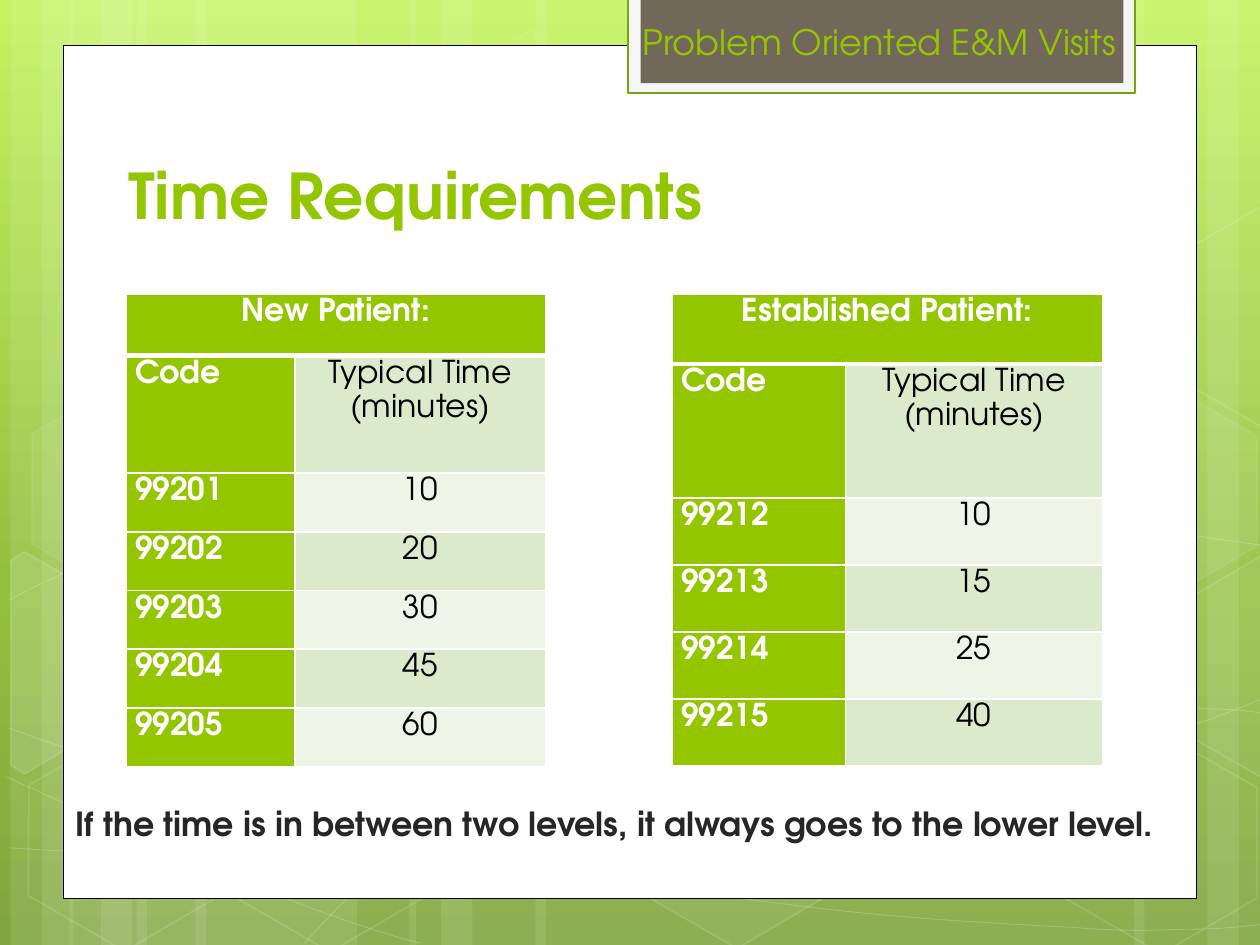
from copy import deepcopy
from dataclasses import dataclass
from math import cos, radians, sin
from typing import Optional

from lxml.etree import SubElement
from pptx import Presentation
from pptx.dml.color import RGBColor
from pptx.enum.shapes import MSO_SHAPE
from pptx.enum.text import MSO_ANCHOR, PP_ALIGN
from pptx.oxml.ns import qn
from pptx.util import Pt

Point = tuple[float, float]


@dataclass(frozen=True)
class Theme:
    font: str = "TeX Gyre Adventor"
    green: str = "94C600"
    dark_green: str = "74A510"
    pale: str = "DCEACC"
    paler: str = "EEF5E7"
    white: str = "FFFFFF"
    black: str = "000000"
    ink: str = "262626"
    tab_rim: str = "F5F5F5"
    tab: str = "71685A"
    sky: tuple = ((0, "C3F35F"), (0.62, "93BF3F"), (1, "81A53E"))
    title_size: float = 36
    tab_size: float = 20
    note_size: float = 19
    table_size: float = 18


THEME = Theme()


@dataclass(frozen=True)
class Box:
    left: float
    top: float
    width: float
    height: float

    def lengths(self) -> list:
        return [Pt(v) for v in (self.left, self.top, self.width, self.height)]


@dataclass(frozen=True)
class Paint:
    """Colours with opacity in percent; a missing colour means no fill or line."""
    fill: Optional[str] = None
    fill_opacity: int = 100
    line: Optional[str] = None
    line_opacity: int = 100
    weight: float = 1


@dataclass(frozen=True)
class TimeTable:
    box: Box
    heading: str
    columns: tuple
    unit: float  # height of a one-line row; the second row is twice as high
    times: tuple


BANDS = [(78, 126), (6, 36), (24, 60), (111.6, 126), (39.6, 36), (57.6, 60),
         (528, 126), (690, 36), (648, 60), (306, 222), (234, 36), (252, 60)]

# Each wave is a start point followed by Bézier triples.
WAVES = [
    [(5, 484.5), (44, 487), (83, 489), (137, 488), (191, 487), (258, 486), (330, 479),
     (402, 472), (504, 458), (570, 444), (636, 431), (703, 409), (725, 397)],
    [(5, 343), (26, 332), (47, 321), (87, 310), (128, 300), (186, 284), (250, 279),
     (314, 274), (392, 273), (471, 279), (550, 284), (682, 307), (725, 312)],
    [(4, 444), (91, 484), (178, 523), (240, 539)],
    [(5, 416), (27, 424), (50, 432), (92, 444), (134, 454), (197, 472), (257, 485),
     (317, 497), (392, 510), (452, 517), (512, 525), (576, 528), (614, 530),
     (652, 533), (662, 531), (680, 531), (699, 531), (712, 529), (725, 528)],
    [(174, 539), (187, 525), (200, 510), (217, 498), (235, 485), (259, 470), (279, 460),
     (300, 450), (312, 445), (338, 438), (364, 431), (413, 421), (438, 416),
     (464, 411), (467, 411), (490, 410), (512, 408), (547, 405), (572, 405),
     (597, 404), (638, 405), (638, 405), (654, 405), (670, 405), (686, 405),
     (699, 405), (711, 406), (718, 407), (722, 408), (722, 407), (724, 408)],
]

# left, top, fill opacity, line opacity
HEXAGONS = [(240.5, 26, 4, 8), (358, 424, 6, 12), (8, 425.5, 0, 12), (10, 224.5, 7, 8),
            (125.5, 426, 0, 12), (542, 326, 10, 12), (600.5, 427, 0, 12), (600.5, 226, 7, 8)]

LEFT_CUT = [(6, 320), (14, 315), (69, 347), (68, 410), (14, 442), (6, 437)]
RIGHT_CUT = [(667, 349), (721, 317.5), (726, 321), (726, 441), (721, 444), (667, 413)]
UPPER_CUT = [(x, y - 200) for x, y in RIGHT_CUT]
CUT_HEXAGONS = [(LEFT_CUT, (26, 385), 10), (RIGHT_CUT, (709, 374.5), 4),
                (UPPER_CUT, (709, 173.5), 0)]
TILT = 30

TABLES = [
    TimeTable(Box(72, 168, 239.8, 270), "New Patient:", (96.5, 143.3), 33.55,
              (("99201", "10"), ("99202", "20"), ("99203", "30"),
               ("99204", "45"), ("99205", "60"))),
    TimeTable(Box(384, 168, 246, 270), "Established Patient:", (99.2, 146.8), 38.3,
              (("99212", "10"), ("99213", "15"), ("99214", "25"), ("99215", "40"))),
]


def color(code: str) -> RGBColor:
    return RGBColor.from_string(code)


def fade(holder, opacity: int) -> None:
    """Make the colour inside an XML fill or line partly transparent."""
    if opacity < 100:
        SubElement(holder.find(".//" + qn("a:srgbClr")), qn("a:alpha"), val=str(opacity * 1000))


def apply_paint(shape, paint: Paint) -> None:
    shape.shadow.inherit = False
    properties = shape.element.spPr
    if paint.fill and paint.fill_opacity:
        shape.fill.solid()
        shape.fill.fore_color.rgb = color(paint.fill)
        fade(properties.find(qn("a:solidFill")), paint.fill_opacity)
    else:
        shape.fill.background()
    if paint.line:
        shape.line.color.rgb = color(paint.line)
        shape.line.width = Pt(paint.weight)
        fade(properties.find(qn("a:ln")), paint.line_opacity)
    else:
        shape.line.fill.background()


def add_preset(page, kind, box: Box, paint: Paint):
    shape = page.shapes.add_shape(kind, *box.lengths())
    apply_paint(shape, paint)
    return shape


def add_outline(page, points: list[Point], paint: Paint, close: bool):
    first, *rest = [(Pt(x), Pt(y)) for x, y in points]
    builder = page.shapes.build_freeform(*first)
    builder.add_line_segments(rest, close=close)
    shape = builder.convert_to_shape()
    apply_paint(shape, paint)
    return shape


def bend(shape) -> None:
    """Turn each three straight segments of an outline into one Bézier curve."""
    segments = list(shape.element.iter(qn("a:lnTo")))
    for i in range(0, len(segments), 3):
        curve = segments[i].makeelement(qn("a:cubicBezTo"), {})
        segments[i].addprevious(curve)
        for segment in segments[i:i + 3]:
            curve.append(segment[0])
            segment.getparent().remove(segment)


def turn_back(points: list[Point], centre: Point) -> list[Point]:
    """Undo the tilt, so that the shape's own rotation can restore it."""
    c, s = cos(radians(TILT)), sin(radians(TILT))
    cx, cy = centre
    return [(cx + (x - cx) * c + (y - cy) * s, cy - (x - cx) * s + (y - cy) * c)
            for x, y in points]


def add_span(para, text: str, size: float, ink: str, bold: bool = False) -> None:
    span = para.add_run()
    span.text = text
    span.font.name = THEME.font
    span.font.size = Pt(size)
    span.font.bold = bold
    span.font.color.rgb = color(ink)


def add_text(page, box: Box, text: str, size: float, ink: str, bold: bool = False,
             anchor=MSO_ANCHOR.MIDDLE):
    frame = page.shapes.add_textbox(*box.lengths()).text_frame
    frame.word_wrap = True
    frame.vertical_anchor = anchor
    para = frame.paragraphs[0]
    add_span(para, text, size, ink, bold)
    return para


def paint_background(page) -> None:
    fill = page.background.fill
    fill.gradient()
    fill.gradient_angle = 270
    stops = page.element.find(".//" + qn("a:gsLst"))
    stops.append(deepcopy(stops[0]))
    for stop, (position, code) in zip(fill.gradient_stops, THEME.sky):
        stop.position = position
        stop.color.rgb = color(code)


def draw_backdrop(page) -> None:
    white = THEME.white
    paint_background(page)
    for left, width in BANDS:
        add_preset(page, MSO_SHAPE.RECTANGLE, Box(left, 0, width, 540), Paint(white, 10))
    for wave in WAVES:
        bend(add_outline(page, wave, Paint(line=white, line_opacity=20, weight=0.5), False))
    for left, top, fill_opacity, line_opacity in HEXAGONS:
        hexagon = add_preset(page, MSO_SHAPE.HEXAGON, Box(left, top, 126, 109.5),
                             Paint(white, fill_opacity, white, line_opacity))
        hexagon.adjustments[0] = 0.285
        hexagon.rotation = TILT
    for points, centre, opacity in CUT_HEXAGONS:
        add_outline(page, turn_back(points, centre),
                    Paint(white, opacity, white, 12), True).rotation = TILT


def set_borders(cell, bottom: float) -> None:
    properties = cell._tc.get_or_add_tcPr()
    for place, (side, weight) in enumerate((("L", 1), ("R", 1), ("T", 1), ("B", bottom))):
        line = properties.makeelement(qn("a:ln" + side), {"w": str(Pt(weight))})
        SubElement(SubElement(line, qn("a:solidFill")), qn("a:srgbClr"), val=THEME.white)
        properties.insert(place, line)


def add_time_table(page, plan: TimeTable) -> None:
    rows = [(plan.heading, ""), ("Code", "Typical Time (minutes)"), *plan.times]
    table = page.shapes.add_table(len(rows), 2, *plan.box.lengths()).table
    table.first_row = table.horz_banding = False
    for column, width in zip(table.columns, plan.columns):
        column.width = Pt(width)
    table.cell(0, 0).merge(table.cell(0, 1))
    for r, texts in enumerate(rows):
        table.rows[r].height = Pt(plan.unit * (2 if r == 1 else 1) + (1.7 if r == 0 else 0))
        for c, text in enumerate(texts):
            cell = table.cell(r, c)
            strong = r == 0 or c == 0
            cell.margin_left = cell.margin_right = Pt(5.2)
            cell.margin_top = cell.margin_bottom = Pt(0)
            cell.fill.solid()
            cell.fill.fore_color.rgb = color(
                THEME.green if strong else THEME.pale if r % 2 else THEME.paler)
            set_borders(cell, 3 if r == 0 else 1)
            if text:
                para = cell.text_frame.paragraphs[0]
                para.line_spacing = 1.15
                para.alignment = PP_ALIGN.CENTER if r == 0 or c == 1 else PP_ALIGN.LEFT
                add_span(para, text, THEME.table_size,
                         THEME.white if strong else THEME.black, strong)


def main() -> None:
    deck = Presentation()
    deck.slide_width, deck.slide_height = Pt(720), Pt(540)
    page = deck.slides.add_slide(deck.slide_layouts[6])
    draw_backdrop(page)
    for box, paint in (
            (Box(36, 26, 648, 487.2), Paint(THEME.white, line=THEME.black, weight=0.5)),
            (Box(359, -1.5, 289.5, 54.5), Paint(THEME.tab_rim, line=THEME.dark_green, weight=1.25)),
            (Box(366, -1.5, 276, 49), Paint(THEME.tab))):
        add_preset(page, MSO_SHAPE.RECTANGLE, box, paint)
    add_text(page, Box(66.4, 66, 379, 90), "Time Requirements", THEME.title_size, THEME.green, True)
    for time_table in TABLES:
        add_time_table(page, time_table)
    add_text(page, Box(360, -1, 288, 49), "Problem Oriented E&M Visits",
             THEME.tab_size, THEME.green)
    note = add_text(page, Box(0, 455.6, 720, 30),
                    "If the time is in between two levels, it always goes to the lower level.",
                    THEME.note_size, THEME.ink, True, MSO_ANCHOR.TOP)
    note.space_after = Pt(12)
    note._p.get_or_add_pPr().set("marL", str(Pt(36)))
    deck.save("out.pptx")


if __name__ == "__main__":
    main()
